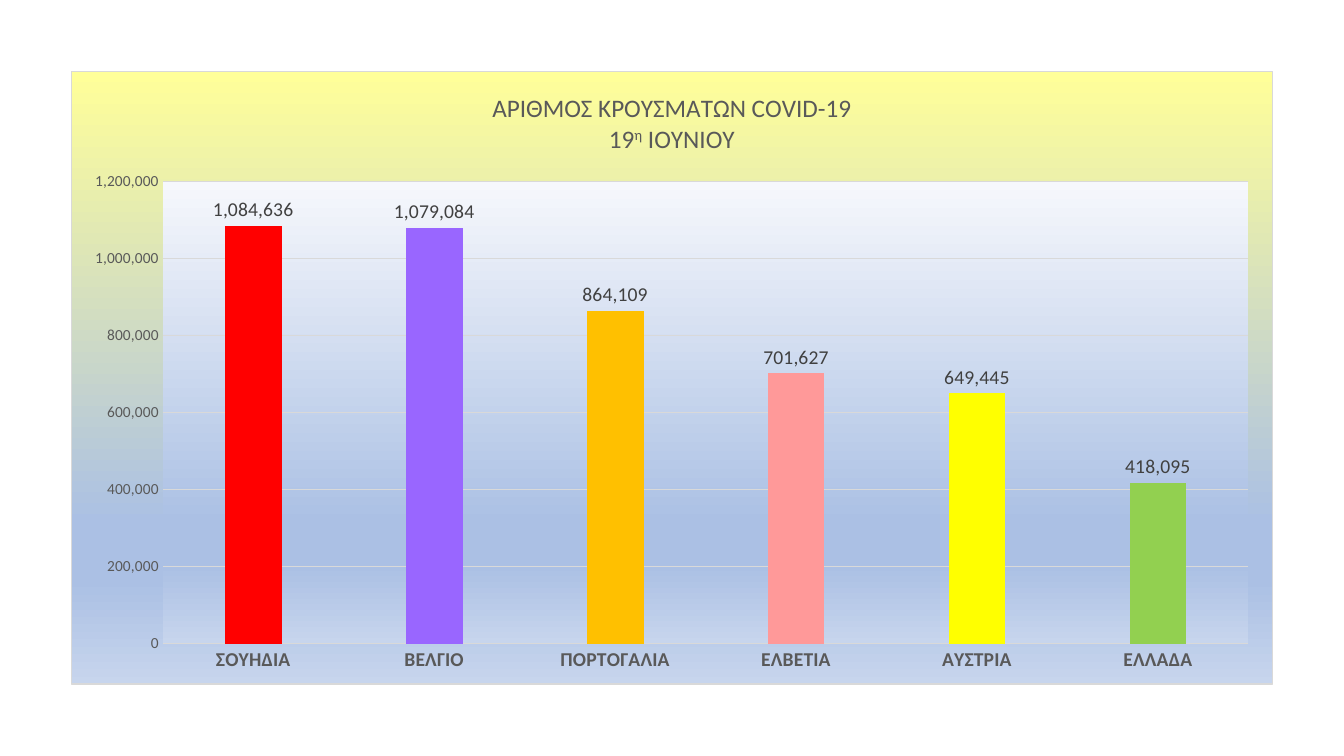
from dataclasses import dataclass

from lxml import etree
from pptx import Presentation
from pptx.chart.data import CategoryChartData
from pptx.dml.color import RGBColor
from pptx.enum.chart import XL_CHART_TYPE, XL_LABEL_POSITION, XL_TICK_MARK
from pptx.oxml import parse_xml
from pptx.oxml.ns import nsdecls
from pptx.util import Cm, Pt

COLUMN = XL_CHART_TYPE.COLUMN_CLUSTERED
OUTSIDE_END = XL_LABEL_POSITION.OUTSIDE_END
NO_TICK = XL_TICK_MARK.NONE


@dataclass(frozen=True)
class Theme:
    font: str = "Calibri"
    text: str = "595959"
    label: str = "404040"
    line: str = "D9D9D9"
    chart_top: str = "FFFF99"
    plot_top: str = "F6F8FC"
    lower_stops: tuple = ((74, "ABC0E4"), (83, "ABC0E4"), (100, "C7D5ED"))
    title_size: int = 18
    category_size: int = 14
    value_size: int = 11
    base_size: int = 10
    line_width: float = 0.75


THEME = Theme()
CASES = [
    ("ΣΟΥΗΔΙΑ", 1084636, "FF0000"),
    ("ΒΕΛΓΙΟ", 1079084, "9966FF"),
    ("ΠΟΡΤΟΓΑΛΙΑ", 864109, "FFC000"),
    ("ΕΛΒΕΤΙΑ", 701627, "FF9999"),
    ("ΑΥΣΤΡΙΑ", 649445, "FFFF00"),
    ("ΕΛΛΑΔΑ", 418095, "92D050"),
]


def style_font(font, size, color, bold=False):
    font.name = THEME.font
    font.size = Pt(size)
    font.bold = bold
    font.color.rgb = RGBColor.from_string(color)


def gradient_properties(top_color, line_fill):
    """Return chart shape properties with a vertical gradient and a given outline fill."""
    stops = "".join(
        f'<a:gs pos="{position * 1000}"><a:srgbClr val="{color}"/></a:gs>'
        for position, color in ((0, top_color), *THEME.lower_stops)
    )
    return parse_xml(
        f'<c:spPr {nsdecls("c", "a")}><a:gradFill><a:gsLst>{stops}</a:gsLst>'
        f'<a:lin ang="5400000" scaled="0"/></a:gradFill>'
        f'<a:ln w="{Pt(THEME.line_width)}">{line_fill}</a:ln></c:spPr>'
    )


deck = Presentation()
deck.slide_width, deck.slide_height = Cm(33.87), Cm(19.05)
page = deck.slides.add_slide(deck.slide_layouts[6])

# Chart
chart_data = CategoryChartData(number_format="#,##0")
chart_data.categories = [country for country, _, _ in CASES]
chart_data.add_series("Series 1", [count for _, count, _ in CASES])
chart = page.shapes.add_chart(
    COLUMN, Cm(1.78), Cm(1.78), Cm(30.3), Cm(15.47), chart_data
).chart
chart.has_legend = False
style_font(chart.font, THEME.base_size, "000000")

# Title
chart.has_title = True
title = chart.chart_title.text_frame
title.text = "ΑΡΙΘΜΟΣ ΚΡΟΥΣΜΑΤΩΝ COVID-19"
date_line = title.add_paragraph()
for text, baseline in (("19", 0), ("η", 30000), (" ΙΟΥΝΙΟΥ", 0)):
    span = date_line.add_run()
    span.text = text
    if baseline:
        span._r.get_or_add_rPr().set("baseline", str(baseline))
for para in title.paragraphs:
    style_font(para.font, THEME.title_size, THEME.text)

# Axes
category_axis, value_axis = chart.category_axis, chart.value_axis
style_font(category_axis.tick_labels.font, THEME.category_size, THEME.text, bold=True)
style_font(value_axis.tick_labels.font, THEME.value_size, THEME.text)
for axis in (category_axis, value_axis):
    axis.major_tick_mark = axis.minor_tick_mark = NO_TICK
value_axis.minimum_scale, value_axis.maximum_scale = 0, 1200000
value_axis.major_unit = 200000
value_axis.tick_labels.number_format = "#,##0"
value_axis.tick_labels.number_format_is_linked = False
value_axis.format.line.fill.background()
for line in (category_axis.format.line, value_axis.major_gridlines.format.line):
    line.color.rgb = RGBColor.from_string(THEME.line)
    line.width = Pt(THEME.line_width)

# Columns and labels
plot = chart.plots[0]
plot.gap_width, plot.overlap = 219, -27
plot.vary_by_categories = False
series = plot.series[0]
for index, (_, _, color) in enumerate(CASES):
    fill = series.points[index].format.fill
    fill.solid()
    fill.fore_color.rgb = RGBColor.from_string(color)
labels = series.data_labels
labels.show_value = True
labels.position = OUTSIDE_END
labels.number_format = "#,##0"
labels.number_format_is_linked = False
style_font(labels.font, THEME.category_size, THEME.label)

# Backgrounds
chart_node = chart._chartSpace.chart
border = etree.tostring(category_axis.format.line.fill._xPr.solidFill, encoding="unicode")
chart_node.addnext(gradient_properties(THEME.chart_top, border))
chart_node.plotArea.append(gradient_properties(THEME.plot_top, "<a:noFill/>"))

deck.save("out.pptx")
